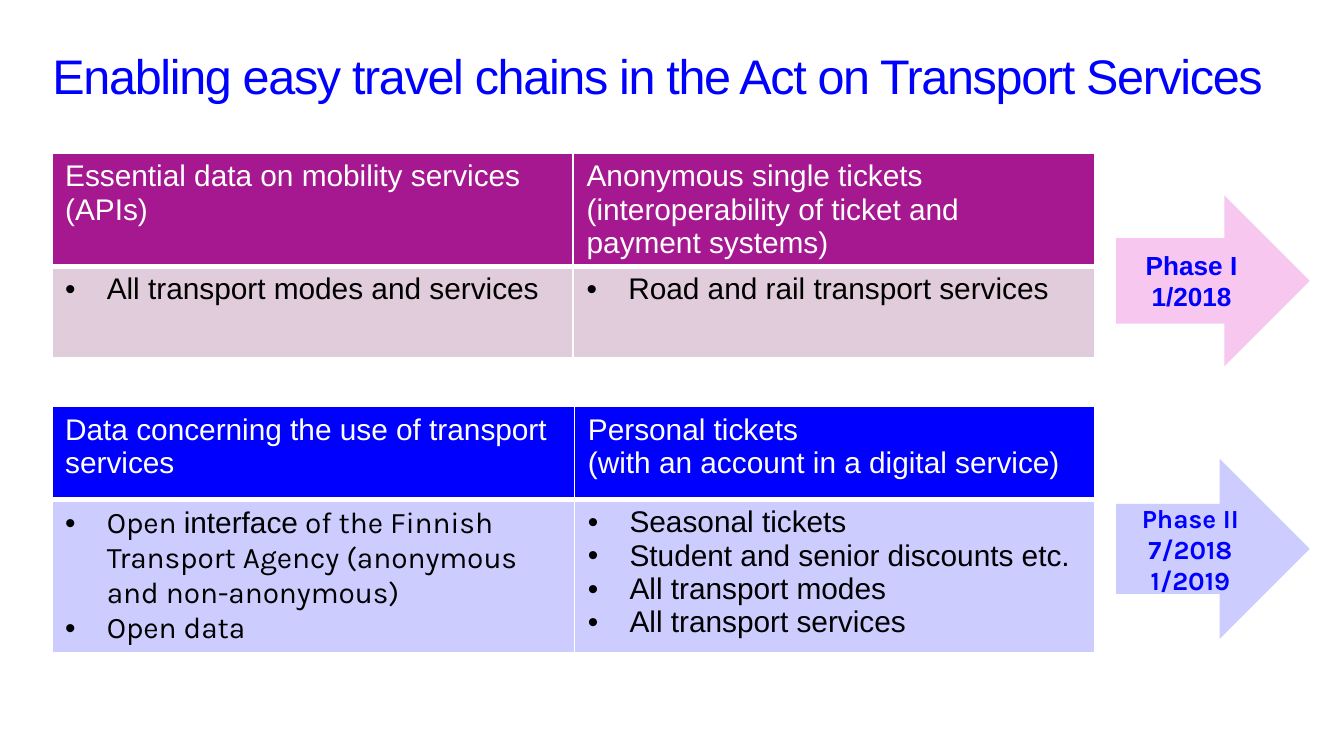
from lxml.etree import SubElement
from pptx import Presentation
from pptx.dml.color import RGBColor
from pptx.enum.shapes import MSO_SHAPE as SHAPE
from pptx.enum.text import MSO_ANCHOR as ANCHOR, MSO_AUTO_SIZE as AUTO, PP_ALIGN as ALIGN
from pptx.oxml.ns import qn
from pptx.util import Pt

PX = 4572
BLUE, WHITE, BLACK = "0000FF", "FFFFFF", "000000"
LILAC, PURPLE, MAUVE, PINK = "CCCCFF", "A51890", "E1CCDB", "F7C7F0"
ARIAL, KARLA = "Arial", "Karla"


def px(*values):
    return [v * PX for v in values]


def rgb(value):
    return RGBColor.from_string(value)


def add_run(p, text, font, size, color, bold=False):
    for i, line in enumerate(text.split("\n")):
        if i:
            p.add_line_break()
        r = p.add_run()
        r.text = line
        r.font.name, r.font.size, r.font.bold = font, Pt(size), bold
        r.font.color.rgb = rgb(color)
    return r


def add_paragraphs(tf, paragraphs, size, color, bold=False, align=None, bullet=False):
    for i, runs in enumerate(paragraphs):
        p = tf.add_paragraph() if i else tf.paragraphs[0]
        p.alignment = align
        if bullet:
            pPr = p._p.get_or_add_pPr()
            indent = 62 * PX
            pPr.set("marL", str(indent))
            pPr.set("indent", str(-indent))
            SubElement(pPr, qn("a:buFont"), typeface=ARIAL)
            SubElement(pPr, qn("a:buChar"), char="•")
        for text, font in runs:
            add_run(p, text, font, size, color, bold)


def set_borders(cell, bottom):
    tcPr = cell._tc.get_or_add_tcPr()
    for side, width in (("L", 1), ("R", 1), ("T", 1), ("B", bottom)):
        ln = SubElement(tcPr, qn(f"a:ln{side}"), w=str(Pt(width)))
        fill = SubElement(ln, qn("a:solidFill"))
        SubElement(fill, qn("a:srgbClr"), val=WHITE)


def add_title(s, box, text):
    sp = s.shapes.title
    sp.left, sp.top, sp.width, sp.height = px(*box)
    tf = sp.text_frame
    tf.margin_left = tf.margin_top = tf.margin_right = tf.margin_bottom = 0
    tf.word_wrap, tf.auto_size = True, AUTO.NONE
    tf.vertical_anchor = ANCHOR.MIDDLE
    p = tf.paragraphs[0]
    p.alignment, p.line_spacing = ALIGN.LEFT, 0.85
    r = add_run(p, text, ARIAL, 26, BLUE)
    r.font._element.set("spc", "-75")


def add_phase_table(s, left, top, widths, heights, fills, headers, lists):
    box = left, top, sum(widths), sum(heights)
    table = s.shapes.add_table(2, 2, *px(*box)).table
    for col, width in zip(table.columns, px(*widths)):
        col.width = width
    for row, height in zip(table.rows, px(*heights)):
        row.height = height
    for i, cells in enumerate((headers, lists)):
        for j, paragraphs in enumerate(cells):
            cell = table.cell(i, j)
            set_borders(cell, 1 if i else 3)
            cell.fill.solid()
            cell.fill.fore_color.rgb = rgb(fills[i])
            add_paragraphs(cell.text_frame, paragraphs, 16,
                           BLACK if i else WHITE, bullet=bool(i))


def add_phase_arrow(s, box, fill, paragraphs):
    sp = s.shapes.add_shape(SHAPE.RIGHT_ARROW, *px(*box))
    sp.shadow.inherit = False
    sp.fill.solid()
    sp.fill.fore_color.rgb = rgb(fill)
    sp.line.fill.background()
    tf = sp.text_frame
    tf.word_wrap = True
    tf.vertical_anchor = ANCHOR.MIDDLE
    add_paragraphs(tf, paragraphs, 14, BLUE, bold=True, align=ALIGN.CENTER)


def plain(*lines, font=ARIAL):
    return [[(line, font)] for line in lines]


def main():
    prs = Presentation()
    prs.slide_width, prs.slide_height = px(2000, 1125)
    s = prs.slides.add_slide(prs.slide_layouts[5])

    add_title(s, (78, 38, 1844, 160),
              "Enabling easy travel chains in the Act on Transport Services")

    add_phase_table(
        s, 77, 228, (776, 776), (168, 137), (PURPLE, MAUVE),
        (plain("Essential data on mobility services \n(APIs)"),
         plain("Anonymous single tickets (interoperability of ticket and payment systems)")),
        (plain("All transport modes and services"),
         plain("Road and rail transport services")))

    agency = [("Open ", KARLA), ("interface", ARIAL),
              (" of the Finnish Transport Agency (anonymous and non-anonymous)", KARLA)]
    add_phase_table(
        s, 77, 605, (778, 774), (138, 226), (BLUE, LILAC),
        (plain("Data concerning the use of transport services"),
         plain("Personal tickets \n(with an account in a digital service)")),
        ([agency] + plain("Open data", font=KARLA),
         plain("Seasonal tickets", "Student and senior discounts etc.",
               "All transport modes", "All transport services")))

    add_phase_arrow(s, (1661, 683, 288, 268), LILAC,
                    plain("Phase II\n7/2018", "1/2019", font=KARLA))
    add_phase_arrow(s, (1661, 291, 288, 254), PINK, plain("Phase I", "1/2018"))

    prs.save("out.pptx")


if __name__ == "__main__":
    main()
